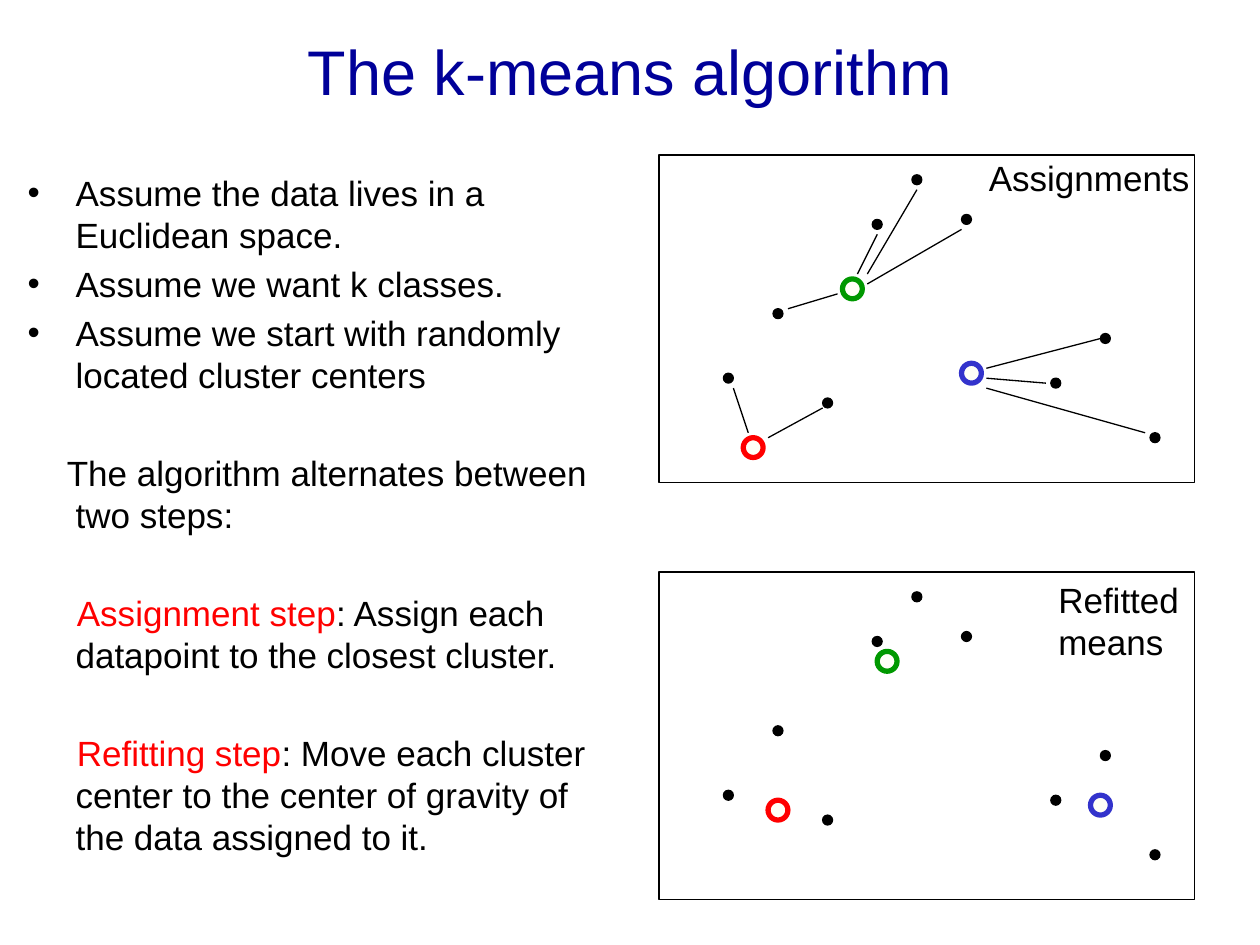
from lxml.etree import SubElement
from pptx import Presentation
from pptx.dml.color import RGBColor
from pptx.enum.shapes import MSO_CONNECTOR, MSO_SHAPE
from pptx.enum.text import MSO_ANCHOR, PP_ALIGN
from pptx.oxml.ns import qn
from pptx.util import Inches, Mm, Pt

BLACK, RED, GREEN, BLUE, NAVY = "000000", "FF0000", "009900", "3333CC", "000099"

# Panel grid: cells of 1 mm, counted from the panel's top left corner
PANEL_COLS, PANEL_ROWS = 108, 66
DOT, MEAN = 2, 4
DATA = [(80, 46), (100, 57), (90, 37), (44, 14), (62, 13), (52, 5),
        (14, 45), (34, 50), (24, 32)]
START_MEANS = [(19, 59, RED), (39, 27, GREEN), (63, 44, BLUE)]
REFITTED_MEANS = [(24, 48, RED), (46, 18, GREEN), (89, 47, BLUE)]
ASSIGNMENTS = [
    (26, 31, 36, 28), (44, 16, 40, 24), (61, 15, 42, 26), (52, 7, 42, 24),
    (15, 47, 18, 56), (22, 57, 33, 51),
    (66, 43, 89, 37), (66, 45, 78, 46), (66, 47, 98, 56)]

# Body: runs, bullet, first-line indent in inches, space before in points
GAP, STEP_GAP = 4, 32
BODY = [
    ([("Assume the data lives in a Euclidean space.", BLACK)], True, -0.38, GAP),
    ([("Assume we want k classes.", BLACK)], True, -0.38, GAP),
    ([("Assume we start with randomly located cluster centers", BLACK)],
     True, -0.38, GAP),
    ([("The algorithm alternates between two steps:", BLACK)],
     False, -0.07, STEP_GAP),
    ([("Assignment step", RED),
      (": Assign each datapoint to the closest cluster.", BLACK)],
     False, 0.01, STEP_GAP),
    ([("Refitting step", RED),
      (": Move each cluster center to the center of gravity of the data "
       "assigned to it.", BLACK)], False, 0.01, STEP_GAP)]


def rgb(value):
    return RGBColor.from_string(value)


def add_text(p, text, size=20, color=BLACK, font="Arial"):
    r = p.add_run()
    r.text = text
    r.font.size, r.font.name = Pt(size), font
    r.font.color.rgb = rgb(color)


def place(sp, left, top, width, height):
    sp.left, sp.top, sp.width, sp.height = left, top, width, height


def set_paragraph(p, bullet, indent, margin=0.38):
    pPr = p._p.get_or_add_pPr()
    pPr.set("marL", str(Inches(margin)))
    pPr.set("indent", str(Inches(indent)))
    if bullet:
        SubElement(pPr, qn("a:buFont"), typeface="Arial")
        SubElement(pPr, qn("a:buChar"), char="•")
    else:
        SubElement(pPr, qn("a:buNone"))


def add_shape(s, kind, box, fill=None, line=BLACK, weight=0.75):
    sp = s.shapes.add_shape(kind, *box)
    sp.shadow.inherit = False
    if fill:
        sp.fill.solid()
        sp.fill.fore_color.rgb = rgb(fill)
    else:
        sp.fill.background()
    sp.line.color.rgb, sp.line.width = rgb(line), Pt(weight)


def add_line(s, x1, y1, x2, y2):
    line = s.shapes.add_connector(MSO_CONNECTOR.STRAIGHT, x1, y1, x2, y2)
    line.line.color.rgb, line.line.width = rgb(BLACK), Pt(0.75)
    SubElement(line._element.spPr, qn("a:effectLst"))


def build_title(s, box):
    title = s.shapes.title
    place(title, *box)
    tf = title.text_frame
    tf.vertical_anchor = MSO_ANCHOR.MIDDLE
    p = tf.paragraphs[0]
    p.alignment = PP_ALIGN.CENTER
    add_text(p, "The k-means algorithm", size=36, color=NAVY)


def build_body(s, box):
    body = s.placeholders[1]
    place(body, *box)
    tf = body.text_frame
    for i, (runs, bullet, indent, before) in enumerate(BODY):
        p = tf.add_paragraph() if i else tf.paragraphs[0]
        p.space_before = Pt(before)
        set_paragraph(p, bullet, indent)
        for text, color in runs:
            add_text(p, text, color=color)


def build_panel(s, left, top, means, links, label, label_box):
    def cell(col, row):
        return left + Mm(col), top + Mm(row)

    def circle(col, row, size, **look):
        x, y = cell(col - size / 2, row - size / 2)
        add_shape(s, MSO_SHAPE.OVAL, (x, y, Mm(size), Mm(size)), **look)

    # Frame, data points and cluster centers
    add_shape(s, MSO_SHAPE.RECTANGLE,
              (left, top, Mm(PANEL_COLS), Mm(PANEL_ROWS)))
    for col, row in DATA:
        circle(col, row, DOT, fill=BLACK)
    for col, row, color in means:
        circle(col, row, MEAN, fill="FFFFF7", line=color, weight=3)

    # Links from points to centers
    for c1, r1, c2, r2 in links:
        add_line(s, *cell(c1, r1), *cell(c2, r2))

    # Label
    col, row, cols, rows = label_box
    tf = s.shapes.add_textbox(*cell(col, row), Mm(cols), Mm(rows)).text_frame
    tf.word_wrap = True
    add_text(tf.paragraphs[0], label)


def main():
    prs = Presentation()
    prs.slide_width, prs.slide_height = Inches(10), Inches(7.5)
    s = prs.slides.add_slide(prs.slide_layouts[1])
    build_title(s, (Inches(0.5), Inches(-0.07), Inches(9), Inches(1.25)))
    build_body(s, (Inches(0.12), Inches(1.31), Inches(4.89), Inches(5.98)))
    left = Inches(5.23)
    build_panel(s, left, Inches(1.23), START_MEANS, ASSIGNMENTS,
                "Assignments", (64, -1, 51, 11))
    build_panel(s, left, Inches(4.54), REFITTED_MEANS, [],
                "Refitted means", (78, 0, 34, 20))
    prs.save("out.pptx")


if __name__ == "__main__":
    main()
